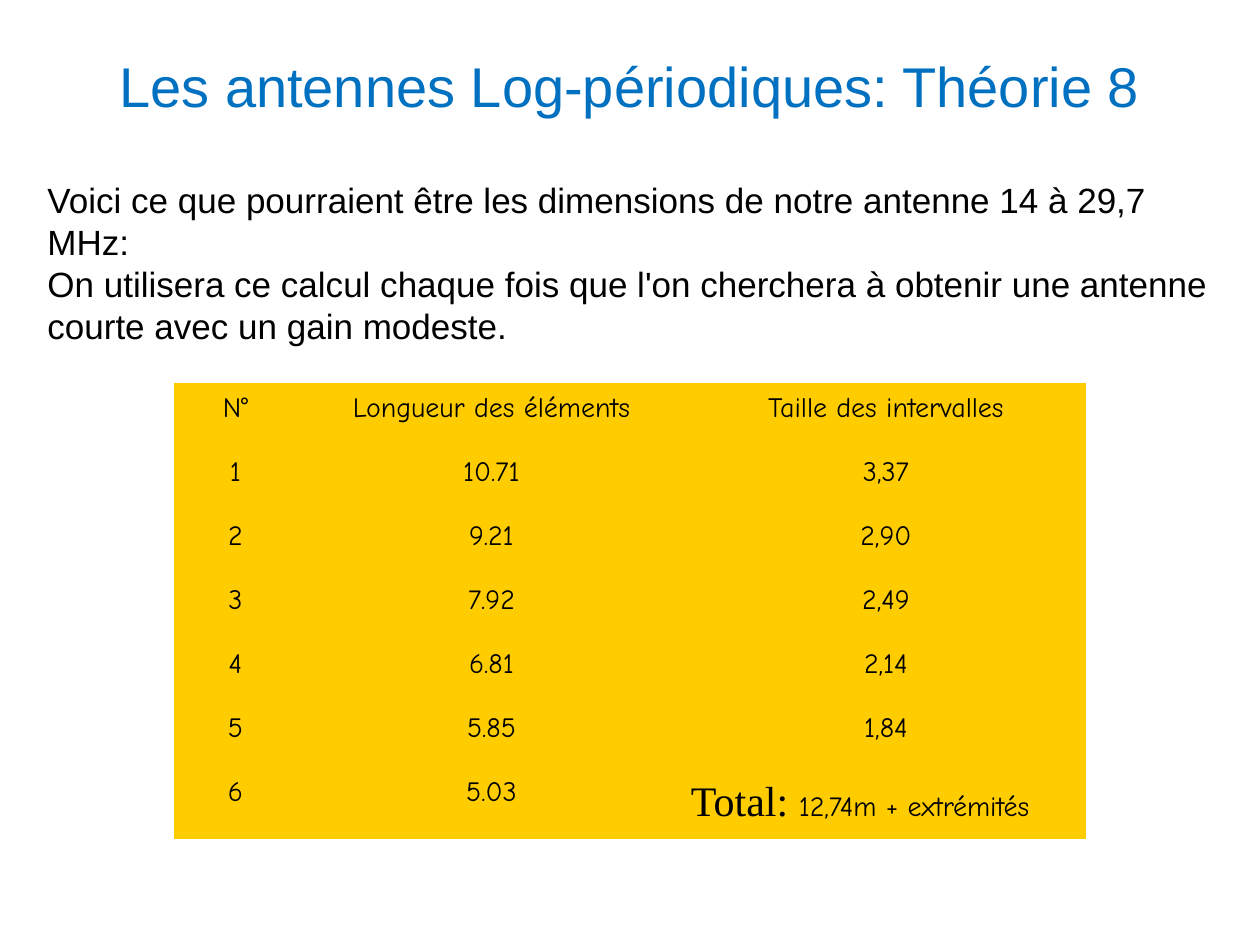
from pptx import Presentation
from pptx.dml.color import RGBColor as RGB
from pptx.enum.text import MSO_ANCHOR as Anchor, PP_ALIGN as Align
from pptx.util import Emu, Pt

# Content
TITLE = "Les antennes Log-périodiques: Théorie 8"
INTRO = [
    "Voici ce que pourraient être les dimensions de notre antenne 14 à 29,7 MHz:",
    "On utilisera ce calcul chaque fois que l'on cherchera à obtenir une antenne "
    "courte avec un gain modeste.",
]
ROWS = [
    ("N°", "Longueur des éléments", "Taille des intervalles"),
    ("1", "10.71", "3,37"),
    ("2", "9.21", "2,90"),
    ("3", "7.92", "2,49"),
    ("4", "6.81", "2,14"),
    ("5", "5.85", "1,84"),
    ("6", "5.03", None),
]
TOTAL = [("Total: ", "total"), ("12,74m + extrémités", "cell")]

# Theme: font, size and colour of each kind of text
THEME = {
    "title": ("Arial", 32, "0070C0"),
    "intro": ("Arial", 20, "000000"),
    "cell": ("Comic Neue", 16, "000000"),
    "total": ("Times New Roman", 24, "000000"),
    "fill": "FFCC00",
    "grid": "{2D5ABB26-0587-4C30-8999-92F81FD0307C}",  # no style, no grid
}

# Layout in px
SIZE = (1260, 945)
TITLE_BOX = (63, 6, 1134, 158)
INTRO_BOX = (35, 171, 1201, 183)
LEFT, TOP = 174, 383
COLS = [123, 389, 400]
HEIGHTS = [64] * 6 + [72]
INSET = 5


def px(n):
    return Emu(round(n * 914400 / 126))


def put(obj, vals):
    for name, val in vals.items():
        setattr(obj, name, val)


def write(par, runs, **form):
    put(par, form)
    for text, kind in runs:
        run = par.add_run()
        run.text = text
        face, size, color = THEME[kind]
        put(run.font, {"name": face, "size": Pt(size)})
        run.font.color.rgb = RGB.from_string(color)


def add_text(slide, box, lines, kind, align):
    frame = slide.shapes.add_textbox(*map(px, box)).text_frame
    put(frame, {"word_wrap": True, "vertical_anchor": Anchor.MIDDLE})
    for i, line in enumerate(lines):
        par = frame.add_paragraph() if i else frame.paragraphs[0]
        write(par, [(line, kind)], alignment=align)


def add_grid(slide):
    box = (LEFT, TOP, sum(COLS), sum(HEIGHTS))
    frame = slide.shapes.add_table(len(ROWS), len(COLS), *map(px, box))
    table = frame.table
    put(table, {"first_row": False, "horz_banding": False})
    table._tbl.tblPr[0].text = THEME["grid"]
    for col, width in zip(table.columns, COLS):
        col.width = px(width)
    sides = ("left", "top", "right", "bottom")
    inset = {f"margin_{side}": px(INSET) for side in sides}
    for r, (row, height) in enumerate(zip(ROWS, HEIGHTS)):
        table.rows[r].height = px(height)
        for c, text in enumerate(row):
            cell = table.cell(r, c)
            put(cell, inset)
            cell.fill.solid()
            cell.fill.fore_color.rgb = RGB.from_string(THEME["fill"])
            par = cell.text_frame.paragraphs[0]
            if text is None:
                write(par, TOTAL, line_spacing=1.15)
            else:
                write(par, [(text, "cell")], line_spacing=1.15,
                      alignment=Align.CENTER, space_after=Pt(10))


def main():
    deck = Presentation()
    put(deck, dict(zip(("slide_width", "slide_height"), map(px, SIZE))))
    slide = deck.slides.add_slide(deck.slide_layouts[6])
    add_grid(slide)
    add_text(slide, INTRO_BOX, INTRO, "intro", Align.LEFT)
    add_text(slide, TITLE_BOX, [TITLE], "title", Align.CENTER)
    deck.save("out.pptx")


if __name__ == "__main__":
    main()
